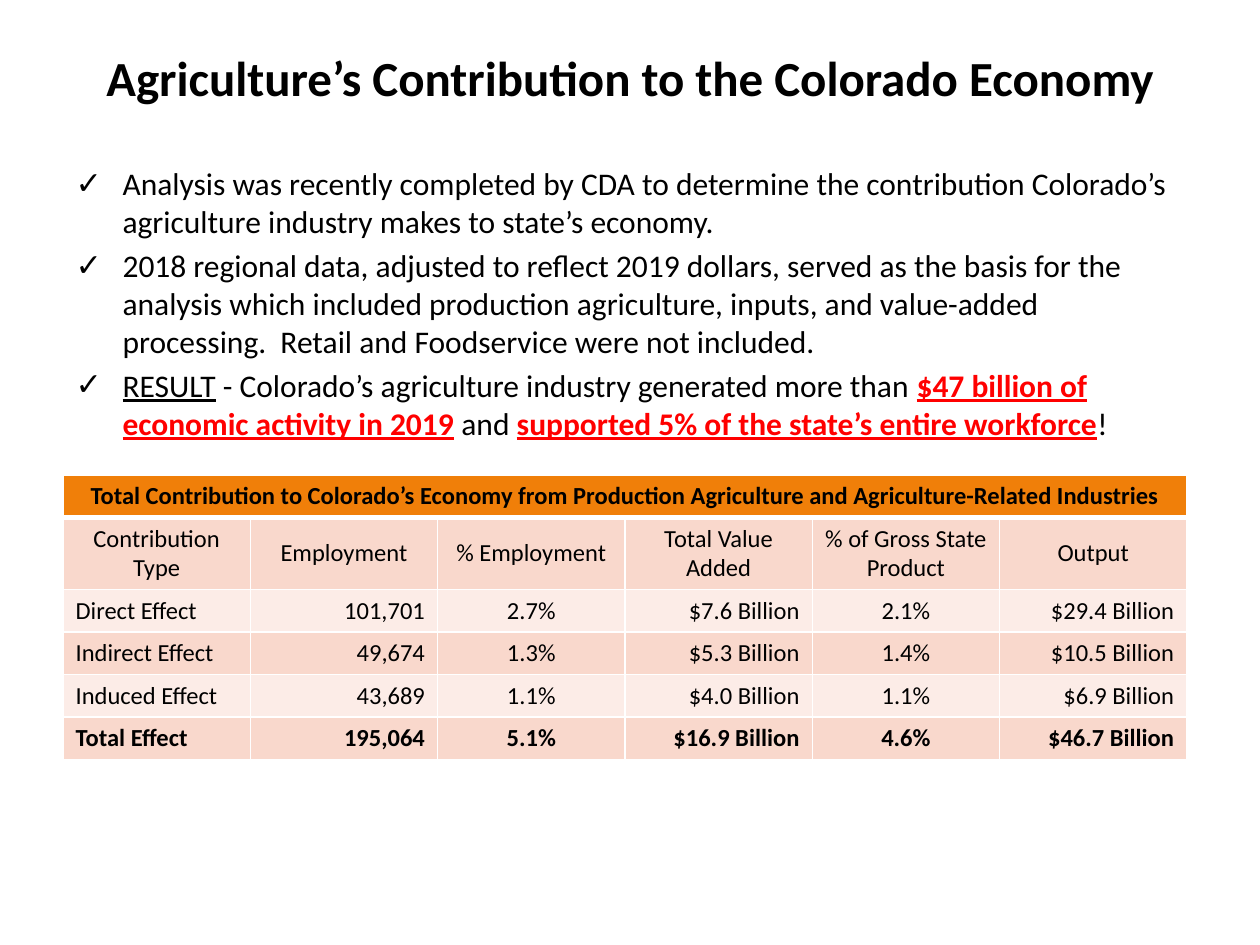
from lxml import etree
from pptx import Presentation
from pptx.dml.color import RGBColor
from pptx.enum.text import MSO_ANCHOR, MSO_AUTO_SIZE, PP_ALIGN
from pptx.oxml.ns import qn
from pptx.util import Pt

SCALE = 914400 / 126
LEFT, MID, RIGHT = PP_ALIGN.LEFT, PP_ALIGN.CENTER, PP_ALIGN.RIGHT
TOP, CENTER = MSO_ANCHOR.TOP, MSO_ANCHOR.MIDDLE
FIXED = MSO_AUTO_SIZE.NONE
BLACK = RGBColor(0, 0, 0)
RED = RGBColor(0xFF, 0, 0)
ORANGE = RGBColor(0xF0, 0x7F, 0x09)
ROSE = RGBColor(0xF9, 0xD8, 0xCC)
BLUSH = RGBColor(0xFC, 0xEC, 0xE7)

TITLE = "Agriculture’s Contribution to the Colorado Economy"
KEY = {"color": RED, "bold": True, "line": True}
POINTS = [
    [("Analysis was recently completed by CDA to determine the contribution "
      "Colorado’s agriculture industry makes to state’s economy.", {})],
    [("2018 regional data, adjusted to reflect 2019 dollars, served as the basis "
      "for the analysis which included production agriculture, inputs, and "
      "value-added processing.  Retail and Foodservice were not included.", {})],
    [("RESULT", {"line": True}),
     (" - Colorado’s agriculture industry generated more than ", {}),
     ("$47 billion of economic activity in 2019", KEY),
     (" and ", {}),
     ("supported 5% of the state’s entire workforce", KEY),
     ("!", {})],
]
BANNER = ("Total Contribution to Colorado’s Economy from Production "
          "Agriculture and Agriculture-Related Industries")
HEADS = ["Contribution Type", "Employment", "% Employment",
         "Total Value Added", "% of Gross State Product", "Output"]
EFFECTS = [
    ["Direct Effect", "101,701", "2.7%", "$7.6 Billion", "2.1%", "$29.4 Billion"],
    ["Indirect Effect", "49,674", "1.3%", "$5.3 Billion", "1.4%", "$10.5 Billion"],
    ["Induced Effect", "43,689", "1.1%", "$4.0 Billion", "1.1%", "$6.9 Billion"],
    ["Total Effect", "195,064", "5.1%", "$16.9 Billion", "4.6%", "$46.7 Billion"],
]
ALIGNS = [LEFT, RIGHT, MID, RIGHT, MID, RIGHT]


def px(num):
    return round(num * SCALE)


def place(shape, left, top, width, height):
    shape.left, shape.top = px(left), px(top)
    shape.width, shape.height = px(width), px(height)


def write(para, text, size=14, color=BLACK, bold=False, line=False, align=LEFT):
    para.alignment = align
    run = para.add_run()
    run.text = text
    font = run.font
    font.name, font.size = "Calibri", Pt(size)
    font.bold, font.underline = bold, line
    font.color.rgb = color


def add_title(slide):
    shape = slide.shapes.title
    place(shape, 63, 38, 1134, 78)
    frame = shape.text_frame
    frame.auto_size = FIXED
    frame.vertical_anchor = CENTER
    write(frame.paragraphs[0], TITLE, size=28, bold=True, align=MID)


def add_check(para):
    props = para._p.get_or_add_pPr()
    props.set("marL", str(px(47)))
    props.set("indent", str(px(-47)))
    etree.SubElement(props, qn("a:buChar")).set("char", "✓")


def add_points(slide):
    shape = slide.placeholders[1]
    place(shape, 63, 158, 1124, 315)
    frame = shape.text_frame
    frame.auto_size = FIXED
    for num, parts in enumerate(POINTS):
        para = frame.add_paragraph() if num else frame.paragraphs[0]
        add_check(para)
        para.space_before = Pt(3.6 if num else 0)
        for text, style in parts:
            write(para, text, size=18, **style)


def add_edges(cell, **widths):
    props = cell._tc.get_or_add_tcPr()
    for side in "LRTB":
        edge = etree.SubElement(props, qn(f"a:ln{side}"))
        edge.set("w", str(Pt(widths.get(side, 1))))
        fill = etree.SubElement(edge, qn("a:solidFill"))
        etree.SubElement(fill, qn("a:srgbClr")).set("val", "FFFFFF")


def fill_cell(cell, text, fill, anchor=TOP, edges=None, **style):
    add_edges(cell, **(edges or {}))
    cell.fill.solid()
    cell.fill.fore_color.rgb = fill
    cell.vertical_anchor = anchor
    if text:
        write(cell.text_frame.paragraphs[0], text, **style)


def add_table(slide):
    rows, cols = len(EFFECTS) + 2, len(HEADS)
    frame = slide.shapes.add_table(rows, cols, px(63), px(475),
                                   px(1124), px(283))
    table = frame.table
    for col in table.columns:
        col.width = px(1124 / cols)
    for num, row in enumerate(table.rows):
        row.height = px(72 if num == 1 else 42)
    table.cell(0, 0).merge(table.cell(0, cols - 1))
    for col, head in enumerate(HEADS):
        fill_cell(table.cell(0, col), "" if col else BANNER, ORANGE,
                  edges={"B": 3}, bold=True, align=MID)
        fill_cell(table.cell(1, col), head, ROSE, anchor=CENTER,
                  edges={"T": 3}, align=MID)
    for num, effect in enumerate(EFFECTS):
        for col, text in enumerate(effect):
            fill_cell(table.cell(num + 2, col), text, ROSE if num % 2 else BLUSH,
                      bold=effect is EFFECTS[-1], align=ALIGNS[col])


def main():
    deck = Presentation()
    deck.slide_width, deck.slide_height = px(1260), px(945)
    slide = deck.slides.add_slide(deck.slide_layouts[1])
    add_title(slide)
    add_points(slide)
    add_table(slide)
    deck.save("out.pptx")


if __name__ == "__main__":
    main()
